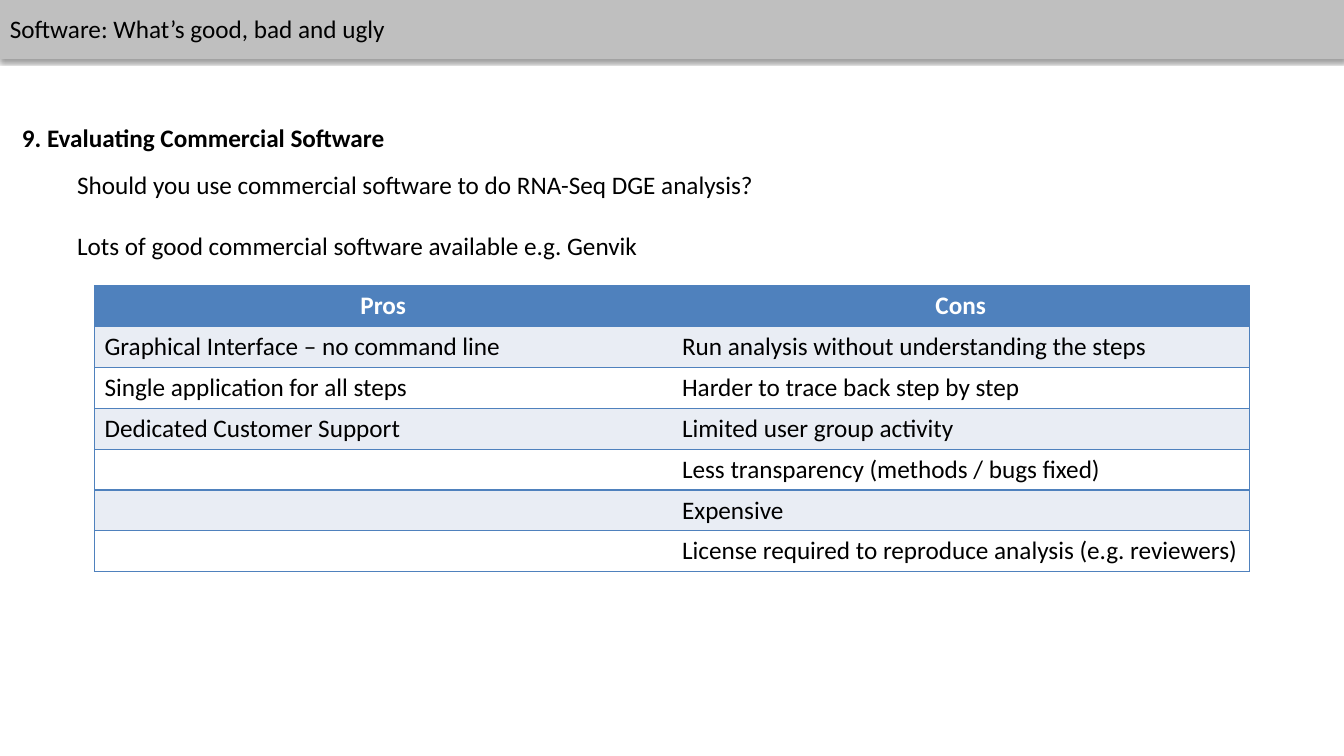
from lxml import etree
from pptx import Presentation
from pptx.dml.color import RGBColor
from pptx.enum import shapes, text
from pptx.oxml import parse_xml
from pptx.oxml.ns import nsdecls, qn
from pptx.util import Pt

COLORS = {"bar": "BFBFBF", "text": "000000", "white": "FFFFFF",
          "blue": "4F81BD", "band": "E9EDF4"}
ROWS = [
    ("Pros", "Cons"),
    ("Graphical Interface – no command line", "Run analysis without understanding the steps"),
    ("Single application for all steps", "Harder to trace back step by step"),
    ("Dedicated Customer Support", "Limited user group activity"),
    ("", "Less transparency (methods / bugs fixed)"),
    ("", "Expensive"),
    ("", "License required to reproduce analysis (e.g. reviewers)"),
]


def style(p, color="text", bold=False):
    p.font.name = "Calibri"
    p.font.size = Pt(18)
    p.font.bold = bold
    p.font.color.rgb = RGBColor.from_string(COLORS[color])


prs = Presentation()
prs.slide_width, prs.slide_height = Pt(960), Pt(540)
s = prs.slides.add_slide(prs.slide_layouts[6])

# Header bar with a soft shadow below it
bar = s.shapes.add_shape(shapes.MSO_SHAPE.RECTANGLE, 0, 0, Pt(960), Pt(42))
bar.fill.solid()
bar.fill.fore_color.rgb = RGBColor.from_string(COLORS["bar"])
bar.line.color.rgb = RGBColor.from_string(COLORS["bar"])
bar.line.width = Pt(0.75)
bar.shadow.inherit = False
bar._element.spPr.find(qn("a:effectLst")).append(parse_xml(
    f'<a:outerShdw {nsdecls("a")} blurRad="{Pt(3.1)}" dist="{Pt(1.6)}" dir="5400000" '
    f'rotWithShape="0"><a:srgbClr val="{COLORS["text"]}"><a:alpha val="38000"/>'
    '</a:srgbClr></a:outerShdw>'))

# Header, heading and body text
for left, top, width, height, bold, lines in [
    (0, 5.8, 286, 29, False, ["Software: What’s good, bad and ugly"]),
    (8.6, 83.5, 277, 29, True, ["9. Evaluating Commercial Software"]),
    (48, 117.6, 508, 73, False,
     ["Should you use commercial software to do RNA-Seq DGE analysis?",
      "Lots of good commercial software available e.g. Genvik"]),
]:
    tf = s.shapes.add_textbox(Pt(left), Pt(top), Pt(width), Pt(height)).text_frame
    tf.word_wrap = False
    for i, line in enumerate(lines):
        p = tf.add_paragraph() if i else tf.paragraphs[0]
        p.text = line
        if i:
            p.space_before = Pt(22)
        style(p, bold=bold)

# Pros and cons table: horizontal rules and an outer frame, no middle line
table = s.shapes.add_table(len(ROWS), 2, Pt(67.5), Pt(204), Pt(825), Pt(204.4)).table
table.first_row = table.horz_banding = False
for r, row in enumerate(ROWS):
    table.rows[r].height = Pt(29.2)
    for c, words in enumerate(row):
        cell = table.cell(r, c)
        p = cell.text_frame.paragraphs[0]
        p.text = words
        style(p, "text" if r else "white", bold=r == 0)
        if r == 0:
            p.alignment = text.PP_ALIGN.CENTER
        tcPr = cell._tc.get_or_add_tcPr()
        inner = "lnL" if c else "lnR"
        for side in ("lnL", "lnR", "lnT", "lnB"):
            ln = etree.SubElement(tcPr, qn(f"a:{side}"), w=str(Pt(1)))
            if side == inner:
                etree.SubElement(ln, qn("a:noFill"))
            else:
                fill = etree.SubElement(ln, qn("a:solidFill"))
                etree.SubElement(fill, qn("a:srgbClr"), val=COLORS["blue"])
        cell.fill.solid()
        shade = "blue" if r == 0 else "band" if r % 2 else "white"
        cell.fill.fore_color.rgb = RGBColor.from_string(COLORS[shade])

prs.save("out.pptx")
